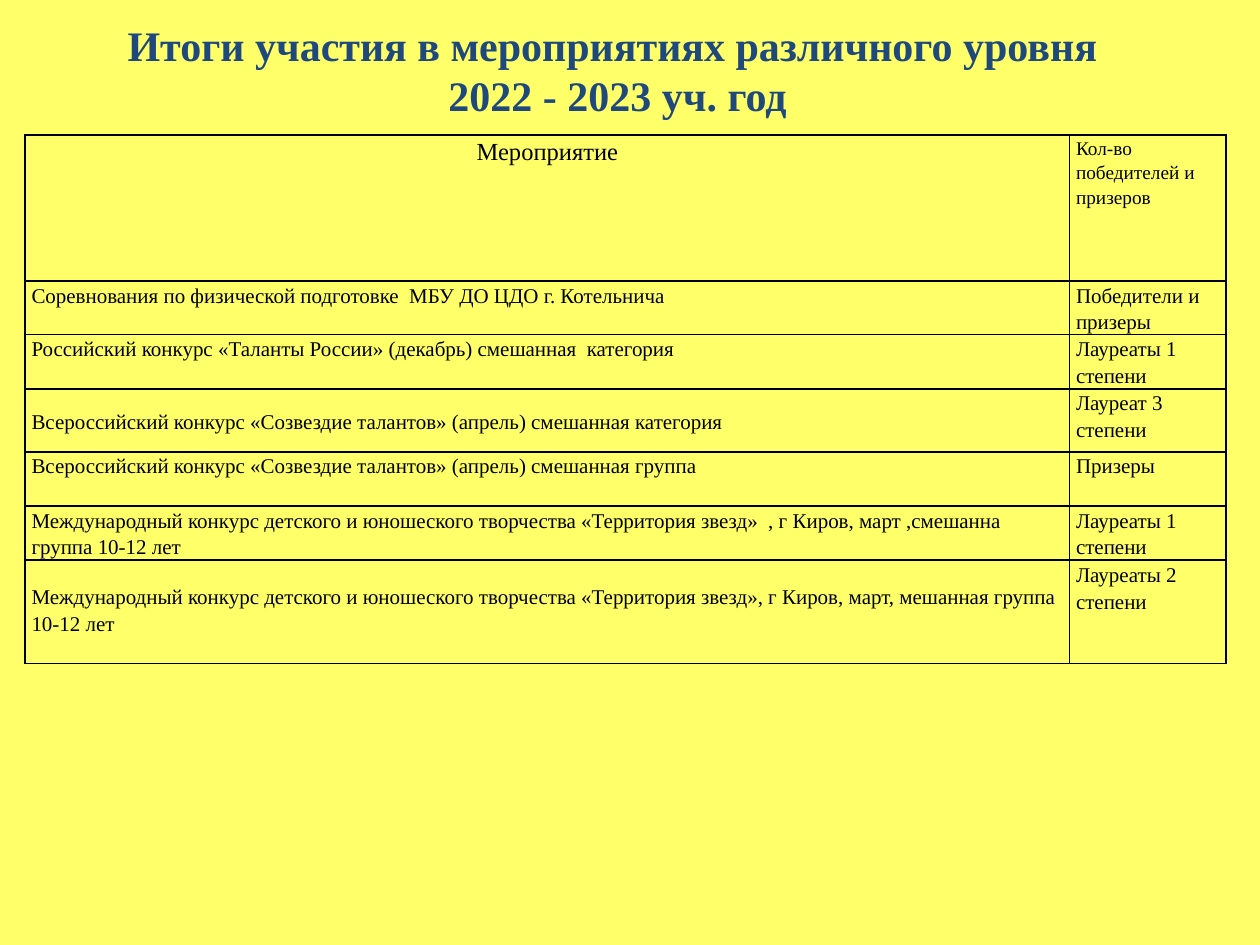
"""Build a slide with a table of contest results."""
from lxml import etree
from pptx import Presentation
from pptx.dml.color import RGBColor
from pptx.enum.text import MSO_ANCHOR, PP_ALIGN
from pptx.oxml.ns import qn
from pptx.util import Inches, Pt

TOP, MIDDLE = MSO_ANCHOR.TOP, MSO_ANCHOR.MIDDLE
LEFT, CENTER, JUSTIFY = PP_ALIGN.LEFT, PP_ALIGN.CENTER, PP_ALIGN.JUSTIFY
YELLOW = RGBColor(0xFF, 0xFF, 0x69)
NAVY = RGBColor(0x1F, 0x49, 0x7D)
BLACK = RGBColor(0, 0, 0)

TITLE = ["Итоги участия в мероприятиях различного уровня", " 2022 - 2023 уч. год"]
WIDTHS = [8.29, 1.24]
HEIGHTS = [1.16, 0.42, 0.43, 0.5, 0.43, 0.43, 0.82]
ROWS = [
    ("Мероприятие", "Кол-во победителей и  призеров"),
    ("Соревнования по физической подготовке  МБУ ДО ЦДО г. Котельнича",
     "Победители и призеры"),
    ("Российский конкурс «Таланты России» (декабрь) смешанная  категория",
     "Лауреаты 1 степени"),
    ("Всероссийский конкурс «Созвездие талантов» (апрель) смешанная категория",
     "Лауреат 3 степени"),
    ("Всероссийский конкурс «Созвездие талантов» (апрель) смешанная группа",
     "Призеры"),
    ("Международный конкурс детского и юношеского творчества "
     "«Территория звезд»  , г Киров, март ,смешанна группа 10-12 лет",
     "Лауреаты 1 степени"),
    ("Международный конкурс детского и юношеского творчества "
     "«Территория звезд», г Киров, март, мешанная группа 10-12 лет",
     "Лауреаты 2 степени"),
]
LOOKS = {
    (0, 0): {"size": 14, "align": CENTER},
    (0, 1): {"size": 11},
    (3, 0): {"align": JUSTIFY, "anchor": MIDDLE},
    (6, 0): {"top": 0.18},
}


class Page:
    def __init__(self, deck):
        self.font = "Times New Roman"
        self.slide = deck.slides.add_slide(deck.slide_layouts[5])
        fill = self.slide.background.fill
        fill.solid()
        fill.fore_color.rgb = YELLOW

    def text(self, para, words, size, color, bold=False):
        run = para.add_run()
        run.text = words
        font = run.font
        font.name, font.size, font.bold = self.font, Pt(size), bold
        font.color.rgb = color

    def title(self, lines, left, top, width, height):
        shape = self.slide.shapes.title
        shape.left, shape.top = Inches(left), Inches(top)
        shape.width, shape.height = Inches(width), Inches(height)
        frame = shape.text_frame
        frame.vertical_anchor = MIDDLE
        para = frame.paragraphs[0]
        para.alignment = CENTER
        for num, line in enumerate(lines):
            if num:
                para.add_line_break()
            self.text(para, line, 24, NAVY, True)

    def border(self, cell):
        props = cell._tc.get_or_add_tcPr()
        for num, side in enumerate(("a:lnL", "a:lnR", "a:lnT", "a:lnB")):
            line = etree.Element(qn(side), w=str(Pt(1)))
            fill = etree.SubElement(line, qn("a:solidFill"))
            etree.SubElement(fill, qn("a:srgbClr"), val=str(BLACK))
            props.insert(num, line)

    def cell(self, cell, words, size=12, align=LEFT, anchor=TOP, top=0):
        cell.margin_left = cell.margin_right = Inches(0.05)
        cell.margin_top, cell.margin_bottom = Inches(top), 0
        cell.vertical_anchor = anchor
        cell.fill.background()
        self.border(cell)
        para = cell.text_frame.paragraphs[0]
        para.alignment, para.line_spacing = align, 1.15
        self.text(para, words, size, BLACK)

    def table(self, rows, left, top):
        grid = self.slide.shapes.add_table(
            len(rows), len(WIDTHS), Inches(left), Inches(top),
            Inches(sum(WIDTHS)), Inches(sum(HEIGHTS))).table
        grid.first_row = grid.horz_banding = False
        for col, width in zip(grid.columns, WIDTHS):
            col.width = Inches(width)
        for row, height in zip(grid.rows, HEIGHTS):
            row.height = Inches(height)
        for r, row in enumerate(rows):
            for c, words in enumerate(row):
                self.cell(grid.cell(r, c), words, **LOOKS.get((r, c), {}))


def main():
    deck = Presentation()
    deck.slide_width, deck.slide_height = Inches(10), Inches(7.5)
    page = Page(deck)
    page.title(TITLE, 0, 0.02, 9.72, 1.07)
    page.table(ROWS, 0.2, 1.07)
    deck.save("out.pptx")


if __name__ == "__main__":
    main()
